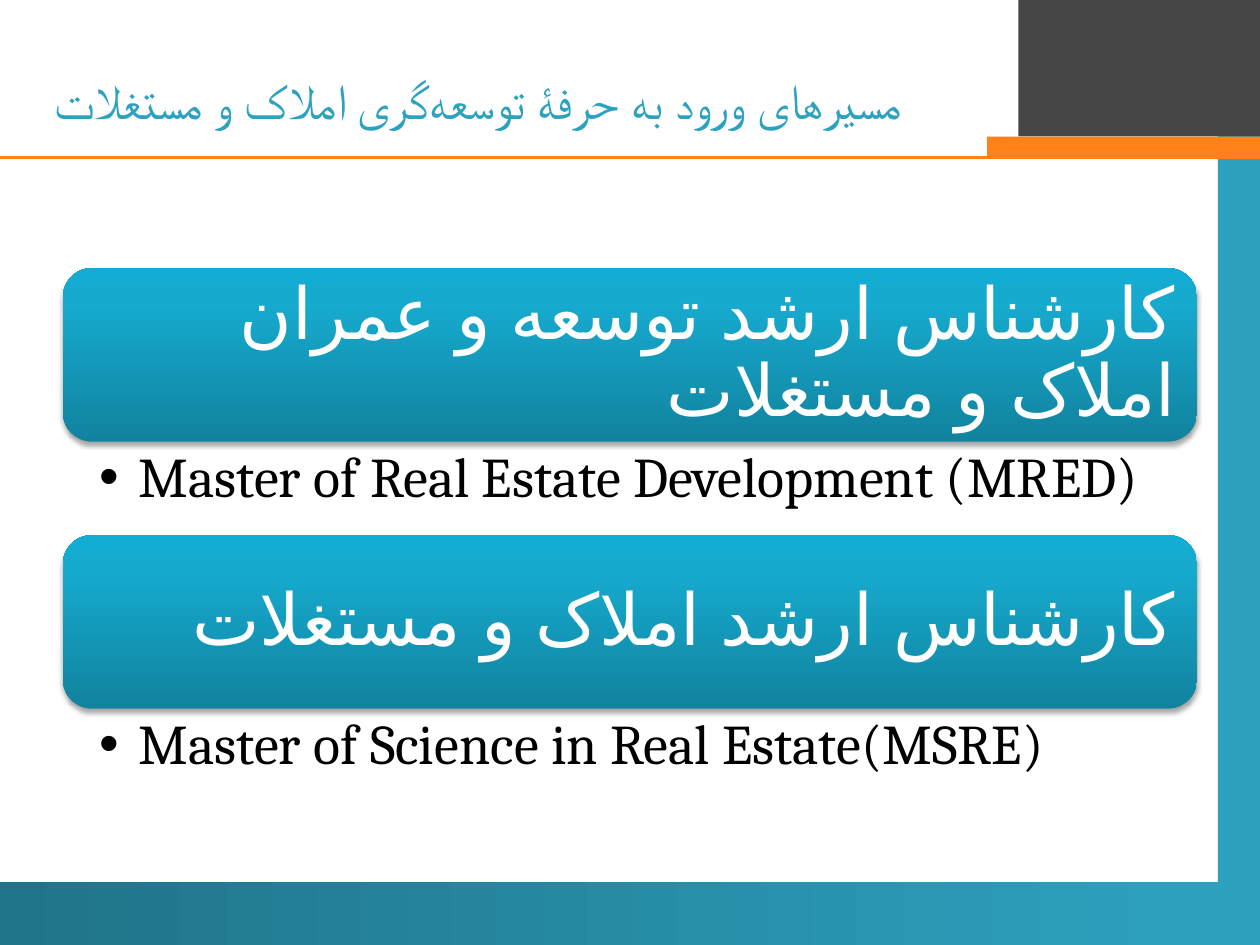
from lxml.etree import SubElement
from pptx import Presentation
from pptx.dml.color import RGBColor
from pptx.enum.shapes import MSO_CONNECTOR, MSO_SHAPE
from pptx.enum.text import MSO_ANCHOR, PP_ALIGN
from pptx.oxml.ns import qn
from pptx.util import Pt

TEAL = RGBColor(0x2D, 0xA2, 0xBF)
DEEP = RGBColor(0x20, 0x74, 0x89)
GREY = RGBColor(0x46, 0x46, 0x46)
ORANGE = RGBColor(0xFF, 0x81, 0x19)
WHITE = RGBColor(0xFF, 0xFF, 0xFF)
BLACK = RGBColor(0, 0, 0)
GLOSS = [
    (0, RGBColor(0x11, 0x83, 0x9F)),
    (80, RGBColor(0x16, 0xAA, 0xCE)),
    (100, RGBColor(0x13, 0xAD, 0xD3)),
]
JOINER = chr(0x200C)
TITLE = JOINER.join(["مسیرهای ورود به حرفۀ توسعه", "گری املاک و مستغلات "])
PATHS = [
    ("کارشناس ارشد توسعه و عمران املاک و مستغلات", "Master of Real Estate Development (MRED)"),
    ("کارشناس ارشد املاک و مستغلات", "Master of Science in Real Estate(MSRE)"),
]


def apply(item, values):
    """Set each named attribute of the item."""
    for name, value in values.items():
        setattr(item, name, value)


def block(slide, kind, box, color=None):
    """Add a borderless shape without shadow, filled if a colour is given."""
    shape = slide.shapes.add_shape(kind, *map(Pt, box))
    shape.shadow.inherit = False
    shape.line.fill.background()
    if color is not None:
        shape.fill.solid()
        shape.fill.fore_color.rgb = color
    return shape


def blend(shape, stops, angle):
    """Fill the shape with a linear gradient of any number of stops."""
    shape.fill.gradient()
    shape.fill.gradient_angle = angle
    group = shape._element.spPr.find(".//" + qn("a:gsLst"))
    group.clear()
    for place, color in stops:
        stop = SubElement(group, qn("a:gs"), pos=str(place * 1000))
        SubElement(stop, qn("a:srgbClr"), val=str(color))


def shade(shape):
    """Give the shape a soft shadow straight below it."""
    effects = shape._element.spPr.find(qn("a:effectLst"))
    outer = SubElement(effects, qn("a:outerShdw"), blurRad=str(Pt(3.1)),
                       dist=str(Pt(1.8)), dir="5400000", rotWithShape="0")
    color = SubElement(outer, qn("a:srgbClr"), val=str(BLACK))
    SubElement(color, qn("a:alpha"), val="35000")


def write(shape, text, size, face, color, anchor, align, insets):
    """Write one formatted paragraph into the shape and return it."""
    frame = shape.text_frame
    names = ("margin_left", "margin_top", "margin_right", "margin_bottom")
    apply(frame, {"word_wrap": True, "vertical_anchor": anchor,
                  **dict(zip(names, map(Pt, insets)))})
    para = frame.paragraphs[0]
    para.alignment = align
    run = para.add_run()
    run.text = text
    apply(run.font, {"size": Pt(size), "name": face, "bold": False})
    run.font.color.rgb = color
    return para


def persian(para):
    """Make the paragraph run from right to left in Persian."""
    para._p.get_or_add_pPr().set("rtl", "1")
    para.runs[0]._r.get_or_add_rPr().set("lang", "fa-IR")


def frame(slide, box):
    """Draw the coloured bars and the rule around the page."""
    left, top, width, height = box
    right, base = left + width, top + height
    rect = MSO_SHAPE.RECTANGLE
    block(slide, rect, (right - 24, top + 18, 24, height - 18), TEAL)
    foot = block(slide, rect, (left, base - 36, width - 24, 36))
    blend(foot, [(0, DEEP), (100, TEAL)], 0)
    block(slide, rect, (right - 138, top, 138, 78), GREY)
    rule = slide.shapes.add_connector(
        MSO_CONNECTOR.STRAIGHT, Pt(right), Pt(top + 90), Pt(left), Pt(top + 90))
    rule.line.color.rgb = ORANGE
    rule.line.width = Pt(2.25)
    SubElement(rule._element.spPr, qn("a:effectLst"))
    block(slide, rect, (right - 156, top + 78, 156, 12), ORANGE)


def heading(slide, box, text):
    """Place and format the title."""
    title = slide.shapes.title
    apply(title, dict(zip(("left", "top", "width", "height"), map(Pt, box))))
    persian(write(title, text, 28, "Arial", TEAL, MSO_ANCHOR.MIDDLE,
                  PP_ALIGN.CENTER, (7.2, 3.6, 7.2, 3.6)))


def degree(slide, box, name, detail):
    """Draw a degree as a glossy banner with a bullet line below it."""
    left, top, width, height = box
    tall = height * 0.65
    banner = block(slide, MSO_SHAPE.ROUNDED_RECTANGLE, (left, top, width, tall))
    blend(banner, GLOSS, 90)
    shade(banner)
    para = write(banner, name, 41, "Arial", WHITE, MSO_ANCHOR.MIDDLE,
                 PP_ALIGN.RIGHT, (7.2,) * 4)
    para.line_spacing = 0.9
    persian(para)
    SubElement(para.runs[0]._r.get_or_add_rPr(), qn("a:cs"), typeface="Arial")

    note = slide.shapes.add_textbox(
        Pt(left), Pt(top + tall), Pt(width), Pt(height - tall))
    para = write(note, detail, 32, "Cambria", BLACK, MSO_ANCHOR.TOP,
                 PP_ALIGN.LEFT, (20.6, 4, 23, 4))
    para.line_spacing = 0.9
    props = para._p.get_or_add_pPr()
    props.set("marL", str(Pt(22.5)))
    props.set("indent", str(-Pt(22.5)))
    SubElement(props, qn("a:buFont"), typeface="Arial")
    SubElement(props, qn("a:buChar"), char="•")


def main():
    """Build the slide and save it."""
    deck = Presentation()
    deck.slide_width, deck.slide_height = Pt(720), Pt(540)
    slide = deck.slides.add_slide(deck.slide_layouts[5])
    frame(slide, (0, 0, 720, 540))
    heading(slide, (0, 36, 540, 42), TITLE)
    for row, (name, detail) in enumerate(PATHS):
        degree(slide, (36, 153.2 + row * 152.6, 648, 152.6), name, detail)
    deck.save("out.pptx")


if __name__ == "__main__":
    main()
